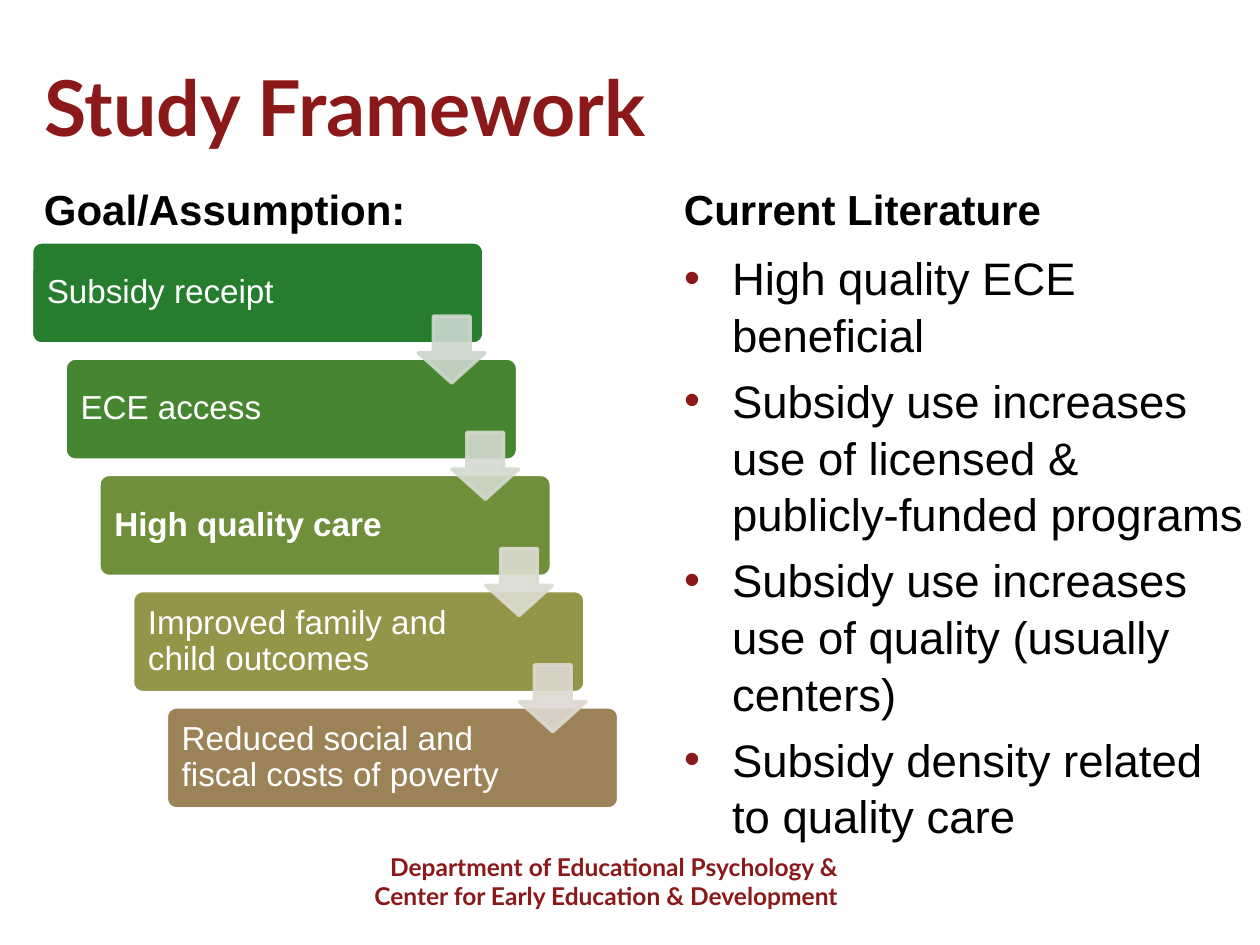
from dataclasses import dataclass
from typing import NamedTuple

from lxml import etree
from pptx import Presentation
from pptx import util as u
from pptx.dml.color import RGBColor
from pptx.enum import shapes, text
from pptx.oxml.ns import qn


@dataclass(frozen=True)
class Theme:
    heading_font: str = "Lato"
    body_font: str = "Arial"
    accent: str = "8C1919"
    ink: str = "000000"
    paper: str = "FFFFFF"
    title_size: int = 44
    bullet_size: int = 26
    subhead_size: int = 24
    step_size: int = 19
    footer_size: int = 14


class Area(NamedTuple):
    """Place on a grid of 40 columns by 30 rows."""
    col: float
    row: float
    cols: float
    rows: float

    def shifted(self, cols: float, rows: float) -> "Area":
        return self._replace(col=self.col + cols, row=self.row + rows)

    def lengths(self) -> list[int]:
        return [u.Inches(cells * CELL) for cells in self]


class Step(NamedTuple):
    label: str
    fill: str
    arrow: str = ""  # colour of the arrow to the next step
    bold: bool = False


THEME = Theme()
CELL = 0.25
COLUMNS, ROWS = 40, 30

# Staircase geometry, in grid cells
FIRST_STEP = Area(1, 7.68, 14.36, 3.24)
FIRST_ARROW = Area(13.28, 10.04, 2.12, 2.12)
STEP_SHIFT = (1.07, 3.69)

STEPS = [
    Step("Subsidy receipt", "257D2D", "CDD7CD"),
    Step("ECE access", "478630", "D3DACE"),
    Step("High quality care", "708F3B", "DBDCD0", bold=True),
    Step("Improved family and child outcomes", "959549", "DED9D1"),
    Step("Reduced social and fiscal costs of poverty", "9B8357"),
]
FINDINGS = [
    "High quality ECE beneficial",
    "Subsidy use increases use of licensed & publicly-funded programs",
    "Subsidy use increases use of quality (usually centers)",
    "Subsidy density related to quality care",
]


def add_bullet(paragraph, color: str, indent: float) -> None:
    props = paragraph._p.get_or_add_pPr()
    props.set("marL", str(u.Inches(indent)))
    props.set("indent", str(u.Inches(-indent)))
    bullet_color = etree.SubElement(props, qn("a:buClr"))
    etree.SubElement(bullet_color, qn("a:srgbClr")).set("val", color)
    etree.SubElement(props, qn("a:buFont")).set("typeface", THEME.body_font)
    etree.SubElement(props, qn("a:buChar")).set("char", "•")


def write(frame, *lines: str, size: float, color: str = THEME.ink,
          font: str = THEME.body_font, bold: bool = False,
          align=text.PP_ALIGN.LEFT, anchor=text.MSO_ANCHOR.TOP,
          spacing: float = 1.0, gap: float = 0, bullet: str = "") -> None:
    frame.word_wrap = True
    frame.auto_size = text.MSO_AUTO_SIZE.NONE
    frame.vertical_anchor = anchor
    for index, line in enumerate(lines):
        paragraph = frame.add_paragraph() if index else frame.paragraphs[0]
        if bullet:
            add_bullet(paragraph, bullet, indent=0.38)
        paragraph.alignment = align
        paragraph.line_spacing = spacing
        paragraph.space_before = u.Pt(gap if index else 0)
        run = paragraph.add_run()
        run.text = line
        run.font.name, run.font.size, run.font.bold = font, u.Pt(size), bold
        run.font.color.rgb = RGBColor.from_string(color)


def add_block(slide, preset, area: Area, fill: str, line: str,
              adjustments: tuple[float, ...]):
    block = slide.shapes.add_shape(preset, *area.lengths())
    block.shadow.inherit = False
    for index, value in enumerate(adjustments):
        block.adjustments[index] = value
    block.fill.solid()
    block.fill.fore_color.rgb = RGBColor.from_string(fill)
    block.line.color.rgb = RGBColor.from_string(line)
    block.line.width = u.Pt(2)
    return block


def add_step(slide, step: Step, area: Area) -> None:
    block = add_block(slide, shapes.MSO_SHAPE.ROUNDED_RECTANGLE, area,
                      step.fill, THEME.paper, (0.1,))
    frame = block.text_frame
    # The wide right margin keeps the label clear of the arrow
    frame.margin_left, frame.margin_right = u.Inches(0.1), u.Inches(0.9)
    write(frame, step.label, size=THEME.step_size, color=THEME.paper,
          bold=step.bold, anchor=text.MSO_ANCHOR.MIDDLE, spacing=0.9)


def add_arrow(slide, color: str, area: Area) -> None:
    arrow = add_block(slide, shapes.MSO_SHAPE.DOWN_ARROW, area,
                      color, color, (0.55, 0.45))
    for shade in arrow._element.spPr.iter(qn("a:srgbClr")):
        etree.SubElement(shade, qn("a:alpha")).set("val", "90000")


def add_label(slide, area: Area, *lines: str, **style) -> None:
    write(slide.shapes.add_textbox(*area.lengths()).text_frame, *lines, **style)


def place(placeholder, area: Area):
    (placeholder.left, placeholder.top,
     placeholder.width, placeholder.height) = area.lengths()
    return placeholder.text_frame


def main() -> None:
    deck = Presentation()
    deck.slide_width = u.Inches(COLUMNS * CELL)
    deck.slide_height = u.Inches(ROWS * CELL)
    slide = deck.slides.add_slide(deck.slide_layouts[1])
    title, findings = slide.placeholders

    # Title and department line
    write(place(title, Area(1, 1.68, 38, 3.32)), "Study Framework",
          size=THEME.title_size, color=THEME.accent, font=THEME.heading_font,
          bold=True, anchor=text.MSO_ANCHOR.MIDDLE)
    add_label(slide, Area(7, 26.84, 20, 2.28),
              "Department of Educational Psychology &",
              "Center for Early Education & Development",
              size=THEME.footer_size, color=THEME.accent,
              font=THEME.heading_font, bold=True, align=text.PP_ALIGN.RIGHT)

    # Staircase from subsidy to outcomes, with the arrows on top
    shifts = [(i * STEP_SHIFT[0], i * STEP_SHIFT[1]) for i in range(len(STEPS))]
    for step, shift in zip(STEPS, shifts):
        add_step(slide, step, FIRST_STEP.shifted(*shift))
    for step, shift in zip(STEPS, shifts):
        if step.arrow:
            add_arrow(slide, step.arrow, FIRST_ARROW.shifted(*shift))

    # Literature findings
    write(place(findings, Area(21.32, 7.68, 18.68, 17.52)), *FINDINGS,
          size=THEME.bullet_size, spacing=1.04, gap=5.2, bullet=THEME.accent)

    # Column headings
    for heading, col, cols in (("Goal/Assumption:", 1, 13),
                               ("Current Literature", 21.32, 17.68)):
        add_label(slide, Area(col, 5.64, cols, 2), heading,
                  size=THEME.subhead_size, bold=True)

    deck.save("out.pptx")


if __name__ == "__main__":
    main()
